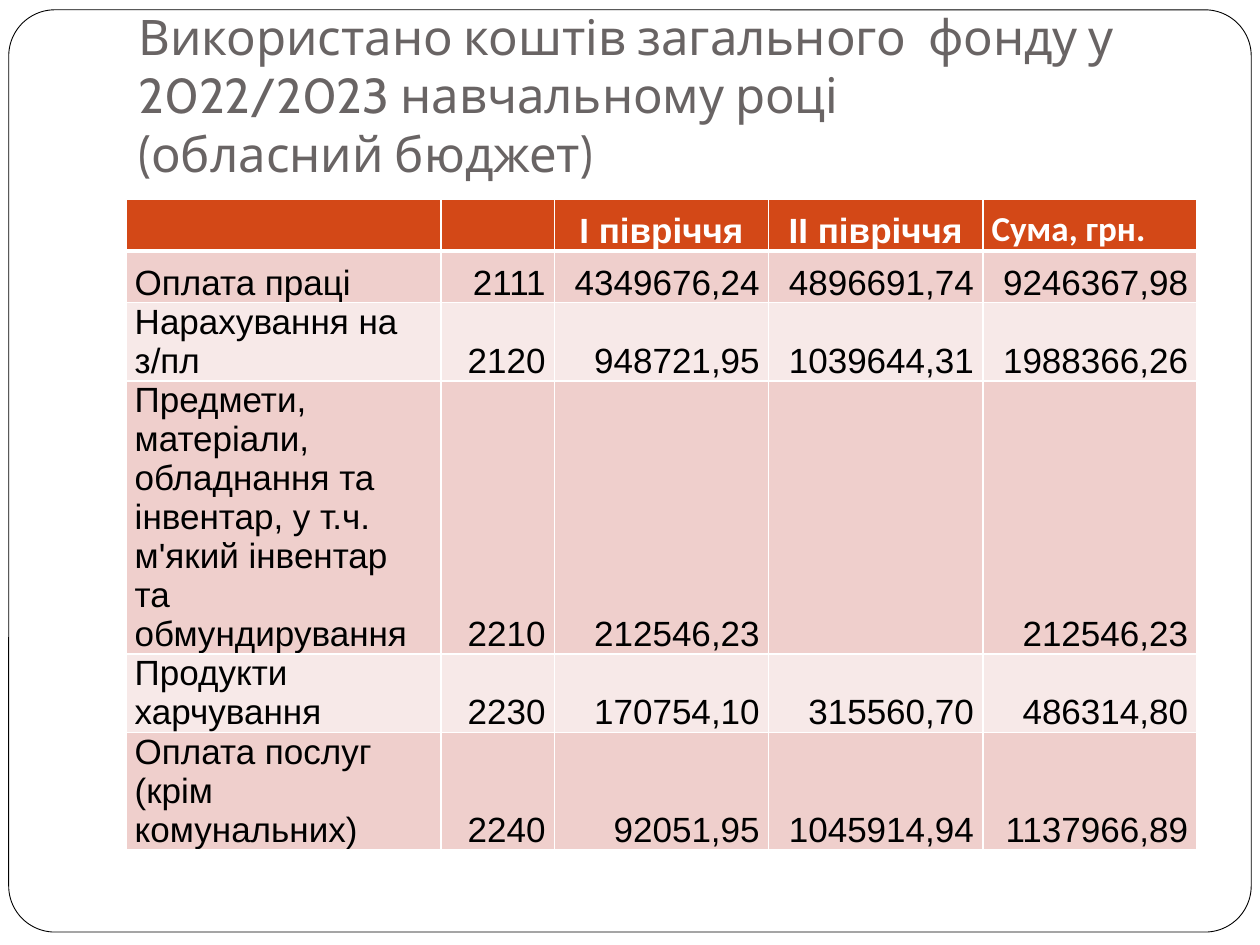
"""Build the slide on general fund spending in the 2022/2023 school year."""
from lxml.etree import SubElement
from pptx import Presentation
from pptx.dml.color import RGBColor
from pptx.enum.shapes import MSO_SHAPE
from pptx.enum.text import MSO_ANCHOR, MSO_AUTO_SIZE, PP_ALIGN
from pptx.oxml.ns import qn
from pptx.util import Pt

WHITE = RGBColor(0xFF, 0xFF, 0xFF)
BLACK = RGBColor(0, 0, 0)
TITLE_GRAY = RGBColor(0x69, 0x64, 0x64)
HEADER_ORANGE = RGBColor(0xD3, 0x48, 0x17)
BAND_DARK = RGBColor(0xEF, 0xCF, 0xCC)
BAND_LIGHT = RGBColor(0xF7, 0xE9, 0xE8)

SPENDING = [
    ("", "", "І півріччя", "ІІ півріччя", "Сума, грн."),
    ("Оплата праці", "2111", "4349676,24", "4896691,74", "9246367,98"),
    ("Нарахування на з/пл", "2120", "948721,95", "1039644,31", "1988366,26"),
    ("Предмети, матеріали, обладнання та інвентар, у т.ч. м'який інвентар та обмундирування",
     "2210", "212546,23", "", "212546,23"),
    ("Продукти харчування", "2230", "170754,10", "315560,70", "486314,80"),
    ("Оплата послуг (крім комунальних)", "2240", "92051,95", "1045914,94", "1137966,89"),
]
COLUMN_WIDTHS = [180, 64.8, 122.4, 122.4, 122.4]
ROW_HEIGHT = 29.5


def set_borders(cell, bottom_width):
    properties = cell._tc.get_or_add_tcPr()
    widths = {"a:lnL": 1, "a:lnR": 1, "a:lnT": 1, "a:lnB": bottom_width}
    for position, (side, width) in enumerate(widths.items()):
        line = SubElement(properties, qn(side), w=str(Pt(width)))
        SubElement(SubElement(line, qn("a:solidFill")), qn("a:srgbClr"), val=str(WHITE))
        properties.insert(position, line)


prs = Presentation()
prs.slide_width, prs.slide_height = Pt(720), Pt(540)
slide = prs.slides.add_slide(prs.slide_layouts[5])

title = slide.shapes.title
title.left, title.top, title.width, title.height = Pt(72), Pt(21.6), Pt(612), Pt(90)
heading = title.text_frame
heading.text = "Використано коштів загального  фонду у 2022/2023 навчальному році\v(обласний бюджет)"
heading.auto_size = MSO_AUTO_SIZE.NONE
heading.word_wrap = True
heading.vertical_anchor = MSO_ANCHOR.BOTTOM
heading.margin_left = heading.margin_right = heading.margin_bottom = Pt(7.2)
heading.margin_top = Pt(3.6)
heading.paragraphs[0].alignment = PP_ALIGN.LEFT
heading_font = heading.paragraphs[0].font
heading_font.name, heading_font.size = "Cabin", Pt(28)
heading_font.color.rgb = TITLE_GRAY

frame = slide.shapes.add_shape(
    MSO_SHAPE.ROUNDED_RECTANGLE, Pt(5), Pt(5.6), Pt(710), Pt(527))
frame.adjustments[0] = 0.05
frame.shadow.inherit = False
frame.fill.solid()
frame.fill.fore_color.rgb = WHITE
frame.line.color.rgb = BLACK
frame.line.width = Pt(0.5)
title.element.addprevious(frame.element)

budget = slide.shapes.add_table(
    len(SPENDING), len(COLUMN_WIDTHS), Pt(72), Pt(114),
    Pt(sum(COLUMN_WIDTHS)), Pt(ROW_HEIGHT * len(SPENDING))).table
for column, width in zip(budget.columns, COLUMN_WIDTHS):
    column.width = Pt(width)

for r, entries in enumerate(SPENDING):
    budget.rows[r].height = Pt(ROW_HEIGHT)
    is_header = r == 0
    band = HEADER_ORANGE if is_header else BAND_DARK if r % 2 else BAND_LIGHT
    for c, entry in enumerate(entries):
        cell = budget.cell(r, c)
        cell.text = entry
        cell.vertical_anchor = MSO_ANCHOR.BOTTOM
        cell.margin_left = cell.margin_right = Pt(5)
        cell.margin_top = cell.margin_bottom = 0
        cell.fill.solid()
        cell.fill.fore_color.rgb = band
        set_borders(cell, 3 if is_header else 1)
        is_total_header = is_header and c == 4
        paragraph = cell.text_frame.paragraphs[0]
        if c == 0 or is_total_header:
            paragraph.alignment = PP_ALIGN.LEFT
        else:
            paragraph.alignment = PP_ALIGN.CENTER if is_header else PP_ALIGN.RIGHT
        paragraph.font.name = "Calibri" if is_total_header else "Arial"
        paragraph.font.size = Pt(20)
        paragraph.font.bold = is_header
        paragraph.font.color.rgb = WHITE if is_header else BLACK

prs.save("out.pptx")
